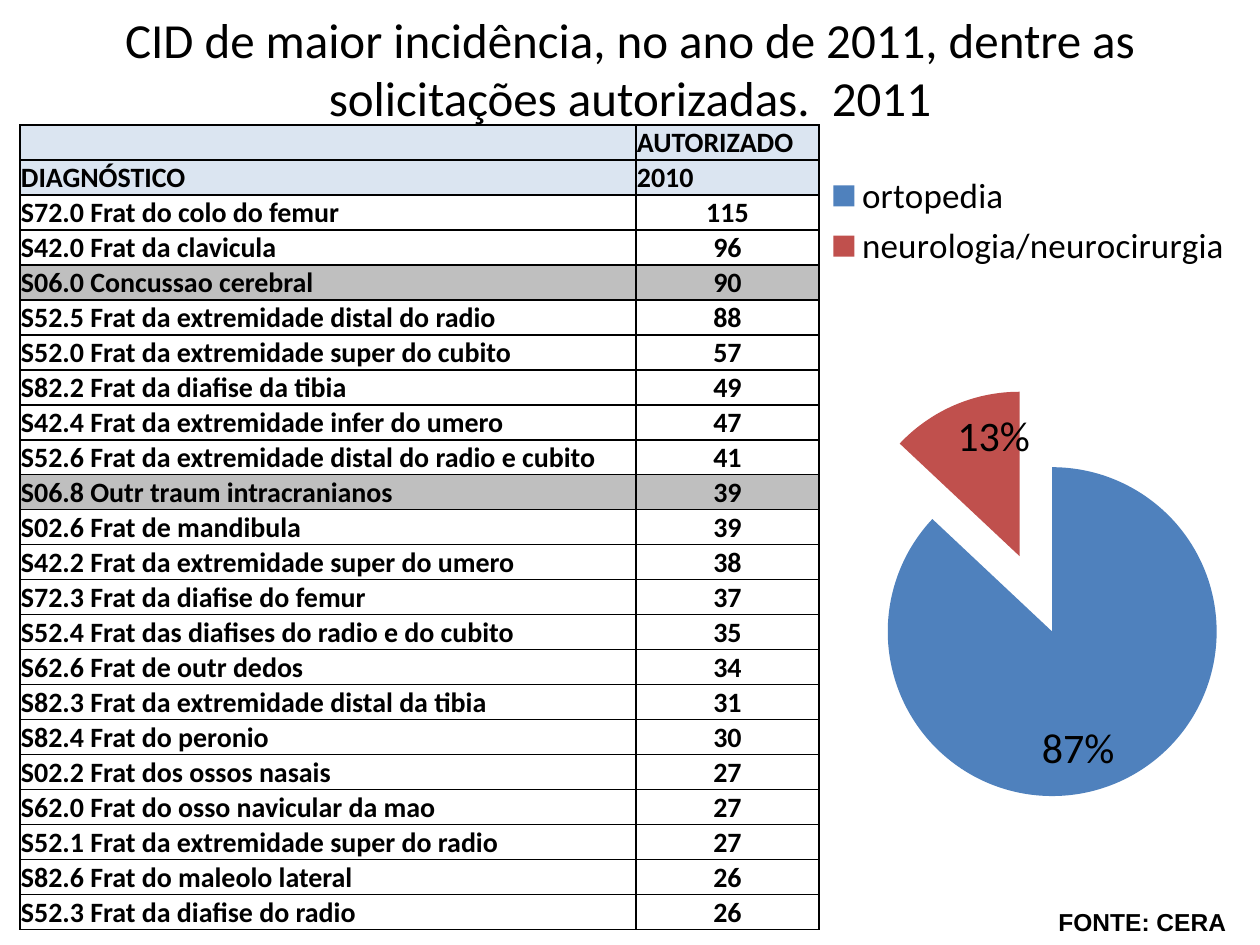
"""Build a slide with a table of authorised diagnoses and a pie chart by specialty."""
import dataclasses

import lxml.etree
import pptx
import pptx.chart.data
import pptx.dml.color
import pptx.enum.chart
import pptx.enum.text
import pptx.oxml.ns
import pptx.util

RGB = pptx.dml.color.RGBColor
ALIGN = pptx.enum.text.PP_ALIGN
ANCHOR = pptx.enum.text.MSO_ANCHOR
qn = pptx.oxml.ns.qn

BLACK = RGB(0, 0, 0)
HEADER = RGB(0xDB, 0xE5, 0xF1)
GREY = RGB(0xBF, 0xBF, 0xBF)
BLUE = RGB(0x4F, 0x81, 0xBD)
RED = RGB(0xC0, 0x50, 0x4D)
EMU_PER_PX = 914400 / 126
EXPLOSION = "25"


@dataclasses.dataclass
class Row:
    label: str
    value: str
    fill: RGB | None = None
    align: ALIGN = ALIGN.CENTER


@dataclasses.dataclass
class Slice:
    name: str
    value: int
    color: RGB


ROWS = [
    Row("", "AUTORIZADO", HEADER, ALIGN.LEFT),
    Row("DIAGNÓSTICO", "2010", HEADER, ALIGN.LEFT),
    Row("S72.0 Frat do colo do femur", "115"),
    Row("S42.0 Frat da clavicula", "96"),
    Row("S06.0 Concussao cerebral", "90", GREY),
    Row("S52.5 Frat da extremidade distal do radio", "88"),
    Row("S52.0 Frat da extremidade super do cubito", "57"),
    Row("S82.2 Frat da diafise da tibia", "49"),
    Row("S42.4 Frat da extremidade infer do umero", "47"),
    Row("S52.6 Frat da extremidade distal do radio e cubito", "41"),
    Row("S06.8 Outr traum intracranianos", "39", GREY),
    Row("S02.6 Frat de mandibula", "39"),
    Row("S42.2 Frat da extremidade super do umero", "38"),
    Row("S72.3 Frat da diafise do femur", "37"),
    Row("S52.4 Frat das diafises do radio e do cubito", "35"),
    Row("S62.6 Frat de outr dedos", "34"),
    Row("S82.3 Frat da extremidade distal da tibia", "31"),
    Row("S82.4 Frat do peronio", "30"),
    Row("S02.2 Frat dos ossos nasais", "27"),
    Row("S62.0 Frat do osso navicular da mao", "27"),
    Row("S52.1 Frat da extremidade super do radio", "27"),
    Row("S82.6 Frat do maleolo lateral", "26"),
    Row("S52.3 Frat da diafise do radio", "26"),
]
SLICES = [Slice("ortopedia", 87, BLUE), Slice("neurologia/neurocirurgia", 13, RED)]
COLUMNS = (616, 183)
ROW_HEIGHT = 35


def px(n: int) -> int:
    return round(n * EMU_PER_PX)


def box(*lengths: int) -> list[int]:
    return [px(n) for n in lengths]


def write(tf, text: str, *, size: int, font: str = "Calibri", bold: bool = False,
          align: ALIGN = ALIGN.LEFT) -> None:
    p = tf.paragraphs[0]
    p.alignment = align
    if not text:
        lxml.etree.SubElement(p._p, qn("a:endParaRPr"), sz=str(size * 100))
        return
    r = p.add_run()
    r.text = text
    r.font.size = pptx.util.Pt(size)
    r.font.name = font
    r.font.bold = bold
    r.font.color.rgb = BLACK


def add_text(s, text: str, bounds: list[int], *, wrap: bool, anchor: ANCHOR, **fmt) -> None:
    tf = s.shapes.add_textbox(*bounds).text_frame
    tf.word_wrap = wrap
    tf.vertical_anchor = anchor
    write(tf, text, **fmt)


def add_borders(cell) -> None:
    tc_pr = cell._tc.get_or_add_tcPr()
    for i, side in enumerate(("lnL", "lnR", "lnT", "lnB")):
        ln = lxml.etree.Element(qn(f"a:{side}"), w=str(pptx.util.Pt(1)))
        fill = lxml.etree.SubElement(ln, qn("a:solidFill"))
        lxml.etree.SubElement(fill, qn("a:srgbClr"), val=str(BLACK))
        tc_pr.insert(i, ln)


def fill_cell(cell, text: str, fill: RGB | None, align: ALIGN) -> None:
    cell.margin_left = cell.margin_right = cell.margin_top = px(1)
    cell.margin_bottom = 0
    cell.vertical_anchor = ANCHOR.BOTTOM
    write(cell.text_frame, text, size=16, bold=True, align=align)
    if fill is None:
        cell.fill.background()
    else:
        cell.fill.solid()
        cell.fill.fore_color.rgb = fill
    add_borders(cell)


def add_diagnosis_table(s, rows: list[Row]) -> None:
    bounds = box(20, 125, sum(COLUMNS), ROW_HEIGHT * len(rows))
    table = s.shapes.add_table(len(rows), len(COLUMNS), *bounds).table
    table.first_row = table.horz_banding = False
    for column, width in zip(table.columns, COLUMNS):
        column.width = px(width)
    for i, row in enumerate(rows):
        table.rows[i].height = px(ROW_HEIGHT)
        fill_cell(table.cell(i, 0), row.label, row.fill, ALIGN.LEFT)
        fill_cell(table.cell(i, 1), row.value, row.fill, row.align)


def explode(ser) -> None:
    points = ser.findall(qn("c:dPt"))
    for successor in [points[0], *(point.find(qn("c:spPr")) for point in points)]:
        successor.addprevious(lxml.etree.Element(qn("c:explosion"), val=EXPLOSION))


def place_plot(chart, **fractions: float) -> None:
    area = chart._chartSpace.find(".//" + qn("c:plotArea"))
    for old in area.findall(qn("c:layout")):
        area.remove(old)
    layout = lxml.etree.Element(qn("c:layout"))
    manual = lxml.etree.SubElement(layout, qn("c:manualLayout"))
    settings = {"layoutTarget": "inner", "xMode": "edge", "yMode": "edge", **fractions}
    for tag, value in settings.items():
        lxml.etree.SubElement(manual, qn(f"c:{tag}"), val=str(value))
    area.insert(0, layout)


def clear_background(chart) -> None:
    sp_pr = lxml.etree.Element(qn("c:spPr"))
    lxml.etree.SubElement(sp_pr, qn("a:noFill"))
    ln = lxml.etree.SubElement(sp_pr, qn("a:ln"))
    lxml.etree.SubElement(ln, qn("a:noFill"))
    chart._chartSpace.find(qn("c:chart")).addnext(sp_pr)


def set_font(font, size: int) -> None:
    font.size = pptx.util.Pt(size)
    font.name = "Calibri"
    font.color.rgb = BLACK


def add_specialty_pie(s, slices: list[Slice]) -> None:
    data = pptx.chart.data.CategoryChartData()
    data.categories = [item.name for item in slices]
    data.add_series("Series 1", [item.value for item in slices])
    kind = pptx.enum.chart.XL_CHART_TYPE.PIE
    chart = s.shapes.add_chart(kind, *box(798, 158, 462, 709), data).chart
    chart.has_title = False
    set_font(chart.font, 10)
    chart.has_legend = True
    chart.legend.position = pptx.enum.chart.XL_LEGEND_POSITION.TOP
    chart.legend.include_in_layout = False
    set_font(chart.legend.font, 20)
    plot = chart.plots[0]
    plot.vary_by_categories = True
    series = plot.series[0]
    for i, item in enumerate(slices):
        fill = series.points[i].format.fill
        fill.solid()
        fill.fore_color.rgb = item.color
    explode(series._element)
    labels = series.data_labels
    labels.show_percentage = True
    labels.show_value = False
    labels.number_format = "0%"
    labels.number_format_is_linked = False
    labels.position = pptx.enum.chart.XL_LABEL_POSITION.INSIDE_END
    set_font(labels.font, 24)
    place_plot(chart, x=0.07, y=0.32, w=0.89, h=0.59)
    clear_background(chart)


def main() -> None:
    prs = pptx.Presentation()
    prs.slide_width, prs.slide_height = box(1260, 945)
    s = prs.slides.add_slide(prs.slide_layouts[6])
    title = "CID de maior incidência, no ano de 2011, dentre as solicitações autorizadas.  2011"
    add_text(s, title, box(0, 18, 1260, 115), wrap=True, anchor=ANCHOR.BOTTOM,
             size=28, align=ALIGN.CENTER)
    add_diagnosis_table(s, ROWS)
    add_specialty_pie(s, SLICES)
    add_text(s, "FONTE: CERA", box(1046, 901, 193, 42), wrap=False, anchor=ANCHOR.TOP,
             size=14, font="Arial", bold=True)
    prs.save("out.pptx")


if __name__ == "__main__":
    main()
